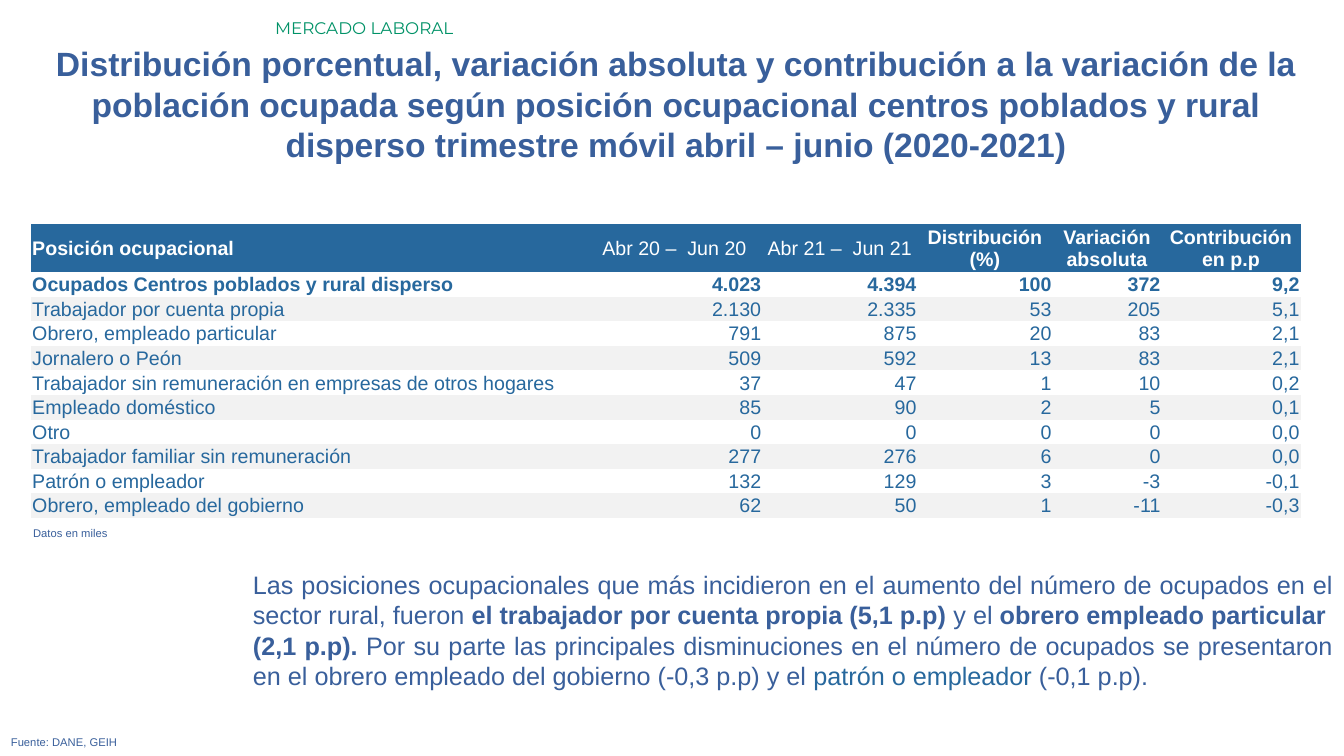
import pptx
import pptx.dml.color
import pptx.enum.text
import pptx.oxml.ns
import pptx.util

Inches = pptx.util.Inches
Align = pptx.enum.text.PP_ALIGN
Anchor = pptx.enum.text.MSO_ANCHOR

# Content
COLORS = {"navy": "395F9B", "blue": "27689D", "green": "009267",
          "white": "FFFFFF", "band": "F2F2F2"}
TITLE = ("Distribución porcentual, variación absoluta y contribución a la variación "
         "de la población ocupada según posición ocupacional centros poblados y rural "
         "disperso trimestre móvil abril – junio (2020-2021)")
# Runs: text, bold, colour
STORY = [
    ("Las posiciones ocupacionales que más incidieron en el aumento del número de "
     "ocupados en el sector rural, fueron ", False, "navy"),
    ("el trabajador por cuenta propia (5,1 p.p) ", True, "navy"),
    ("y el ", False, "navy"),
    ("obrero empleado particular  (2,1 p.p). ", True, "navy"),
    ("Por su parte las principales disminuciones en el número de ocupados se "
     "presentaron en el obrero empleado del gobierno (-0,3 p.p) y el ", False, "navy"),
    ("patrón o empleador ", False, "blue"),
    ("(-0,1 p.p).", False, "navy"),
]
# Boxes: left, top, width, height, size, font, alignment, runs
BOXES = [
    (2.63, 0.13, 10.7, 0.3, 12, "Montserrat", Align.LEFT,
     [("MERCADO LABORAL", False, "green")]),
    (2.41, 5.6, 10.91, 1.31, 18, "Arial", Align.JUSTIFY, STORY),
    (0.01, 7.25, 12.91, 0.24, 8, "Arial", Align.JUSTIFY,
     [("Fuente: DANE, GEIH", False, "navy")]),
    (0.23, 5.17, 12.62, 0.24, 8, "Arial", Align.JUSTIFY,
     [("Datos en miles", False, "navy")]),
]
WIDTHS = [5.51, 1.74, 1.54, 1.34, 1.08, 1.38]
ROWS = [
    ("Posición ocupacional", "Abr 20 –  Jun 20", "Abr 21 –  Jun 21",
     "Distribución (%)", "Variación absoluta", "Contribución en p.p"),
    ("Ocupados Centros poblados y rural disperso", "4.023", "4.394", "100", "372", "9,2"),
    ("Trabajador por cuenta propia", "2.130", "2.335", "53", "205", "5,1"),
    ("Obrero, empleado particular", "791", "875", "20", "83", "2,1"),
    ("Jornalero o Peón", "509", "592", "13", "83", "2,1"),
    ("Trabajador sin remuneración en empresas de otros hogares",
     "37", "47", "1", "10", "0,2"),
    ("Empleado doméstico", "85", "90", "2", "5", "0,1"),
    ("Otro", "0", "0", "0", "0", "0,0"),
    ("Trabajador familiar sin remuneración", "277", "276", "6", "0", "0,0"),
    ("Patrón o empleador", "132", "129", "3", "-3", "-0,1"),
    ("Obrero, empleado del gobierno", "62", "50", "1", "-11", "-0,3"),
]
HEAD, LINE = 0.48, 0.24
PLAIN = "{2D5ABB26-0587-4C30-8999-92F81FD0307C}"  # table style without borders


def color(name):
    return pptx.dml.color.RGBColor.from_string(COLORS[name])


def write(frame, runs, size, font, align):
    para = frame.paragraphs[0]
    para.alignment = align
    for text, bold, tint in runs:
        run = para.add_run()
        run.text = text
        run.font.name = font
        run.font.size = pptx.util.Pt(size)
        run.font.bold = bold
        run.font.color.rgb = color(tint)


def place(shape, left, top, width, height):
    shape.left, shape.top = Inches(left), Inches(top)
    shape.width, shape.height = Inches(width), Inches(height)
    frame = shape.text_frame
    frame.word_wrap = True
    frame.auto_size = pptx.enum.text.MSO_AUTO_SIZE.SHAPE_TO_FIT_TEXT
    frame.vertical_anchor = Anchor.TOP
    return frame


def fill_cell(cell, text, row, col):
    cell.vertical_anchor = Anchor.MIDDLE
    cell.margin_left = cell.margin_top = cell.margin_right = Inches(0.01)
    cell.margin_bottom = 0
    shade = "blue" if row == 0 else "band" if row % 2 == 0 else None
    if shade:
        cell.fill.solid()
        cell.fill.fore_color.rgb = color(shade)
    else:
        cell.fill.background()
    align = Align.LEFT if col == 0 else Align.CENTER if row == 0 else Align.RIGHT
    bold = row == 1 or (row == 0 and col not in (1, 2))
    tint = "white" if row == 0 else "blue"
    write(cell.text_frame, [(text, bold, tint)], 14, "Arial", align)


def main():
    deck = pptx.Presentation()
    deck.slide_width, deck.slide_height = Inches(13.33), Inches(7.5)
    slide = deck.slides.add_slide(deck.slide_layouts[5])

    # Title
    frame = place(slide.shapes.title, 0.45, 0.38, 12.51, 1.31)
    write(frame, [(TITLE, True, "navy")], 24, "Arial", Align.CENTER)

    # Section label, story and notes on the data
    for left, top, width, height, size, font, align, runs in BOXES:
        box = slide.shapes.add_textbox(0, 0, 0, 0)
        write(place(box, left, top, width, height), runs, size, font, align)

    # Table
    tall = HEAD + LINE * (len(ROWS) - 1)
    holder = slide.shapes.add_table(len(ROWS), len(WIDTHS), Inches(0.31), Inches(2.22),
                                    Inches(sum(WIDTHS)), Inches(tall))
    for style in holder.element.iter(pptx.oxml.ns.qn("a:tableStyleId")):
        style.text = PLAIN
    table = holder.table
    table.horz_banding = False
    for column, width in zip(table.columns, WIDTHS):
        column.width = Inches(width)
    for row, texts in enumerate(ROWS):
        table.rows[row].height = Inches(LINE if row else HEAD)
        for col, text in enumerate(texts):
            fill_cell(table.cell(row, col), text, row, col)

    deck.save("out.pptx")


if __name__ == "__main__":
    main()
